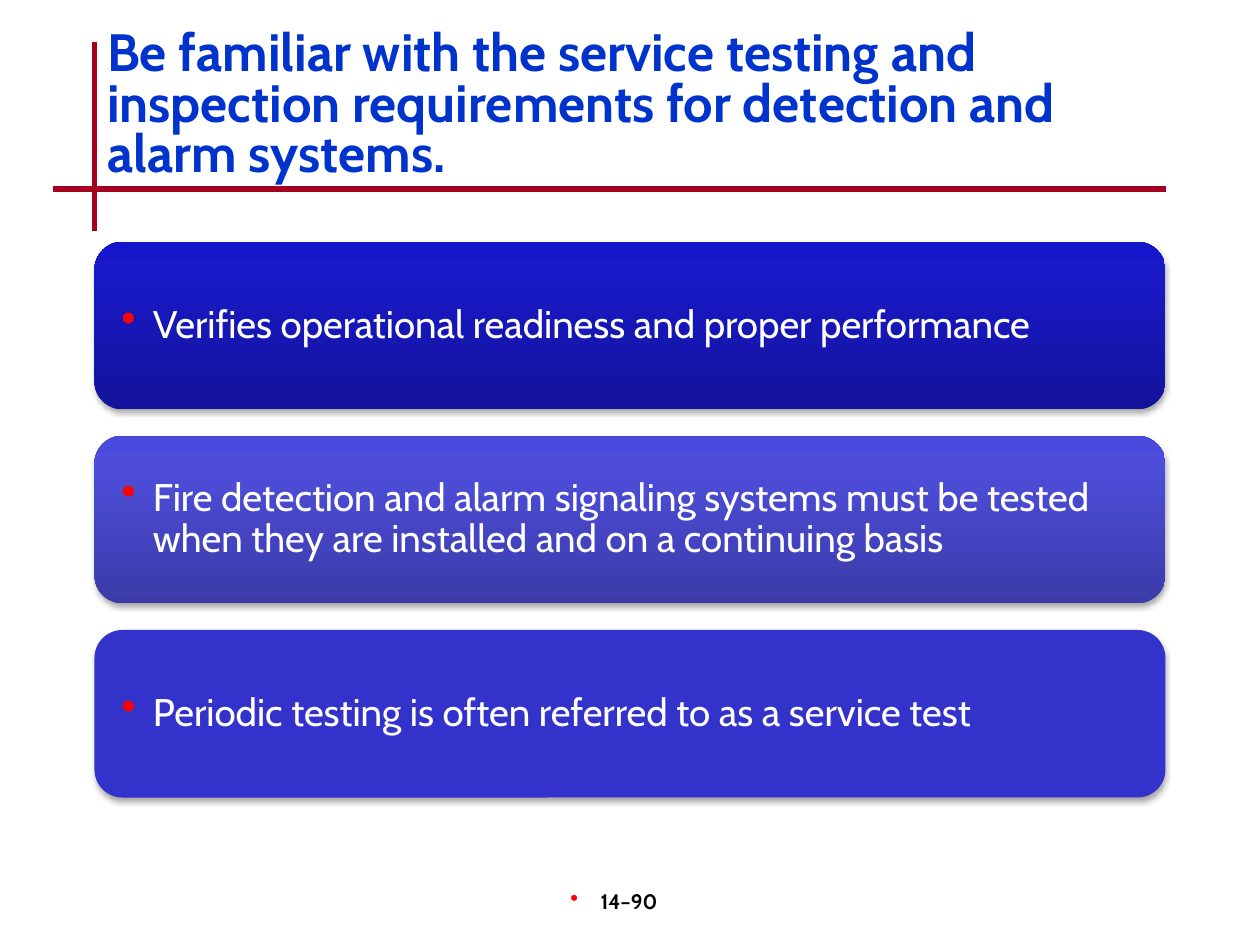
from dataclasses import dataclass
from lxml import etree
from pptx import Presentation
from pptx.dml.color import RGBColor
from pptx.enum.shapes import MSO_CONNECTOR, MSO_SHAPE
from pptx.enum.text import MSO_ANCHOR, MSO_AUTO_SIZE, PP_ALIGN
from pptx.oxml import parse_xml
from pptx.oxml.ns import nsdecls, qn
from pptx.util import Inches, Pt

STRAIGHT = MSO_CONNECTOR.STRAIGHT
ROUNDED = MSO_SHAPE.ROUNDED_RECTANGLE
TOP, MIDDLE = MSO_ANCHOR.TOP, MSO_ANCHOR.MIDDLE
LEFT, CENTER = PP_ALIGN.LEFT, PP_ALIGN.CENTER
NO_FIT = MSO_AUTO_SIZE.NONE


@dataclass
class Theme:
    font: str = "Cabin"
    title: str = "0033CC"
    rule: str = "A50021"
    bullet: str = "FF0000"
    panel_text: str = "FFFFFF"
    number: str = "000000"
    shadow: str = "000000"
    title_size: int = 30
    panel_size: int = 22
    number_size: int = 12


theme = Theme()


def write_text(box, text, size, color, bold=False, align=LEFT, anchor=TOP,
               spacing=1.0, inset=0.1, margin=0, hang=0):
    frame = box.text_frame
    frame.word_wrap = True
    frame.auto_size = NO_FIT
    frame.vertical_anchor = anchor
    frame.margin_left = frame.margin_right = Inches(inset)
    frame.margin_top = frame.margin_bottom = Inches(0.05)
    para = frame.paragraphs[0]
    para.alignment = align
    para.line_spacing = spacing
    if hang:
        properties = para._p.get_or_add_pPr()
        properties.set("marL", str(Inches(margin)))
        properties.set("indent", str(-Inches(hang)))
        bullet_color = etree.SubElement(properties, qn("a:buClr"))
        etree.SubElement(bullet_color, qn("a:srgbClr"), val=theme.bullet)
        etree.SubElement(properties, qn("a:buSzPct"), val="110000")
        etree.SubElement(properties, qn("a:buChar"), char="•")
    span = para.add_run()
    span.text = text
    span.font.name = theme.font
    span.font.size = Pt(size)
    span.font.bold = bold
    span.font.color.rgb = RGBColor.from_string(color)


def fill_panel(panel, colors):
    if len(colors) == 1:
        panel.fill.solid()
        panel.fill.fore_color.rgb = RGBColor.from_string(colors[0])
    else:
        panel.fill.gradient()
        panel.fill.gradient_angle = 90
        stops = panel._element.spPr.find(qn("a:gradFill")).find(qn("a:gsLst"))
        for stop in list(stops):
            stops.remove(stop)
        for position, color in zip((0, 80, 100), colors):
            stop = etree.SubElement(stops, qn("a:gs"), pos=str(position * 1000))
            etree.SubElement(stop, qn("a:srgbClr"), val=color)
    panel.line.fill.background()
    panel.shadow.inherit = False
    effects = panel._element.spPr.find(qn("a:effectLst"))
    effects.append(parse_xml(
        f'<a:outerShdw {nsdecls("a")} blurRad="{Pt(3.1)}" dist="{Pt(1.8)}" '
        f'dir="5400000" rotWithShape="0"><a:srgbClr val="{theme.shadow}">'
        '<a:alpha val="35000"/></a:srgbClr></a:outerShdw>'))


deck = Presentation()
deck.slide_width, deck.slide_height = Inches(10), Inches(7.5)
page = deck.slides.add_slide(deck.slide_layouts[5])

for x1, y1, x2, y2 in ((0.75, 0.33, 0.75, 1.83), (0.42, 1.5, 9.25, 1.5)):
    rule = page.shapes.add_connector(
        STRAIGHT, Inches(x1), Inches(y1), Inches(x2), Inches(y2))
    rule.line.color.rgb = RGBColor.from_string(theme.rule)
    rule.line.width = Pt(3)
    etree.SubElement(rule._element.spPr, qn("a:effectLst"))

title = page.shapes.title
title.left, title.top = Inches(0.75), Inches(0.2)
title.width, title.height = Inches(8.5), Inches(1)
write_text(title, "Be familiar with the service testing and inspection "
           "requirements for detection and alarm systems.",
           theme.title_size, theme.title, bold=True, spacing=0.8)

panels = (
    ("Verifies operational readiness and proper performance",
     ("13139A", "1919C8", "1515CC")),
    ("Fire detection and alarm signaling systems must be tested when they "
     "are installed and on a continuing basis",
     ("3B3BA8", "4D4DDA", "4A4ADE")),
    ("Periodic testing is often referred to as a service test", ("3333CC",)),
)
for index, (text, colors) in enumerate(panels):
    panel = page.shapes.add_shape(
        ROUNDED, Inches(0.75), Inches(1.92 + index * 1.54), Inches(8.5), Inches(1.33))
    fill_panel(panel, colors)
    write_text(panel, text, theme.panel_size, theme.panel_text, anchor=MIDDLE,
               spacing=0.9, inset=0.09, margin=0.31, hang=0.25)

number = page.shapes.add_textbox(Inches(3.92), Inches(7), Inches(2.08), Inches(0.5))
write_text(number, "14–90", theme.number_size, theme.number, bold=True,
           align=CENTER, margin=0.05, hang=0.24)

deck.save("out.pptx")
